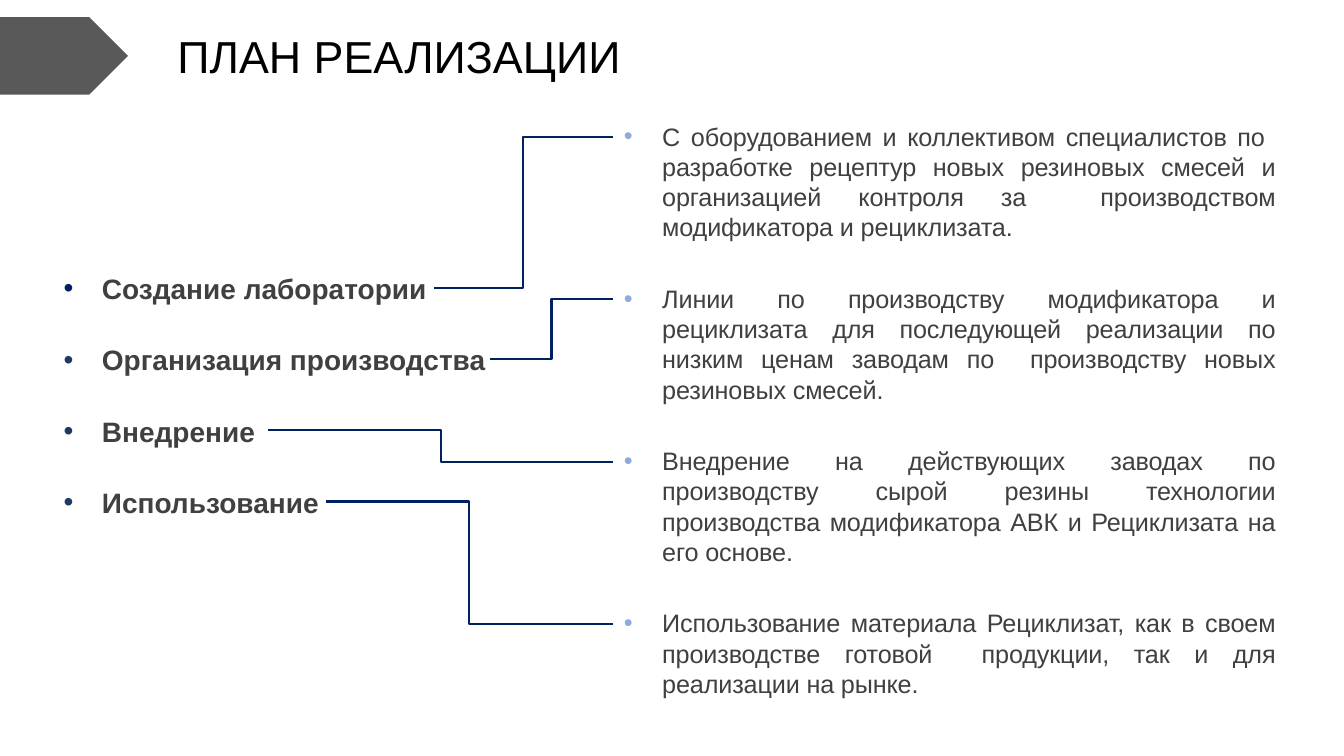
from lxml import etree
from pptx import Presentation
from pptx.dml.color import RGBColor
from pptx.enum.shapes import MSO_CONNECTOR, MSO_SHAPE
from pptx.enum.text import MSO_ANCHOR, MSO_AUTO_SIZE, PP_ALIGN
from pptx.oxml.ns import qn
from pptx.util import Inches, Pt

ELBOW = MSO_CONNECTOR.ELBOW
ARROW = MSO_SHAPE.PENTAGON
TOP = MSO_ANCHOR.TOP
FIXED = MSO_AUTO_SIZE.NONE
LEFT, BOTH = PP_ALIGN.LEFT, PP_ALIGN.JUSTIFY

BLACK = RGBColor(0x00, 0x00, 0x00)
DARK = RGBColor(0x40, 0x40, 0x40)
GREY = RGBColor(0x59, 0x59, 0x59)
NAVY = RGBColor(0x00, 0x20, 0x60)
BLUE = RGBColor(0x20, 0x38, 0x64)
SKY = RGBColor(0x8F, 0xAA, 0xDC)
FONT = "Arial"

TITLE = "ПЛАН РЕАЛИЗАЦИИ"
STEPS = [
    ("Создание лаборатории", NAVY, 4.3,
     "С оборудованием и коллективом специалистов по  разработке рецептур "
     "новых резиновых смесей и организацией контроля за  производством "
     "модификатора и рециклизата."),
    ("Организация производства", BLUE, 4.86,
     "Линии по производству модификатора и рециклизата для последующей "
     "реализации по низким ценам заводам по  производству новых "
     "резиновых смесей."),
    ("Внедрение", BLUE, 2.66,
     "Внедрение на действующих заводах по производству сырой резины "
     "технологии производства модификатора АВК и Рециклизата на его основе."),
    ("Использование", BLUE, 3.23,
     "Использование материала Рециклизат, как в своем производстве "
     "готовой  продукции, так и для реализации на рынке."),
]

WIDE, HIGH = 13.33, 7.5
STEP_Y, STEP_ROW = 2.86, 0.705
NOTE_X, NOTE_Y, NOTE_ROW = 6.08, 1.15, 1.61
NOTE_W, NOTE_H = 6.67, 1.31
LINE_Y = NOTE_Y + 0.21
STEP_GAP = 27


def place(shape, x, y, w, h):
    shape.left, shape.top = Inches(x), Inches(y)
    shape.width, shape.height = Inches(w), Inches(h)
    frame = shape.text_frame
    frame.word_wrap = True
    frame.auto_size = FIXED
    frame.vertical_anchor = TOP
    return frame


def write(para, text, size, color, bold=False, space=0):
    run = para.add_run()
    run.text = text
    font = run.font
    font.name, font.size, font.bold = FONT, Pt(size), bold
    font.color.rgb = color
    if space:
        run._r.get_or_add_rPr().set("spc", str(space))


def bullet(para, color, gap=0):
    props = para._p.get_or_add_pPr()
    props.set("marL", str(Inches(0.39)))
    props.set("indent", str(Inches(-0.38)))
    tint = etree.SubElement(props, qn("a:buClr"))
    etree.SubElement(tint, qn("a:srgbClr")).set("val", str(color))
    etree.SubElement(props, qn("a:buFont")).set("typeface", FONT)
    etree.SubElement(props, qn("a:buChar")).set("char", "•")
    para.alignment = BOTH
    para.space_before = Pt(gap)


def link(slide, x, y, end_x, end_y):
    line = slide.shapes.add_connector(
        ELBOW, Inches(x), Inches(y), Inches(end_x), Inches(end_y))
    line.line.color.rgb = NAVY
    line.line.width = Pt(1.5)
    etree.SubElement(line._element.spPr, qn("a:effectLst"))


def main():
    deck = Presentation()
    deck.slide_width, deck.slide_height = Inches(WIDE), Inches(HIGH)
    slide = deck.slides.add_slide(deck.slide_layouts[1])
    head, body = slide.placeholders

    flag = slide.shapes.add_shape(
        ARROW, 0, Inches(0.17), Inches(1.27), Inches(0.77))
    flag.shadow.inherit = False
    flag.fill.solid()
    flag.fill.fore_color.rgb = GREY
    flag.line.fill.background()

    para = place(head, 1.66, 0.23, 11.09, 0.64).paragraphs[0]
    para.alignment = LEFT
    write(para, TITLE, 32, BLACK)

    frame = place(body, 0.52, 2.64, 5.42, 2.54)
    for i, (name, color, x, note) in enumerate(STEPS):
        para = frame.add_paragraph() if i else frame.paragraphs[0]
        bullet(para, color, STEP_GAP if i else 0)
        write(para, name, 20, DARK, bold=True)

        shift = i * NOTE_ROW
        box = slide.shapes.add_textbox(0, 0, 0, 0)
        para = place(box, NOTE_X, NOTE_Y + shift, NOTE_W, NOTE_H).paragraphs[0]
        bullet(para, SKY)
        write(para, note, 18, DARK, space=-10)
        link(slide, x, STEP_Y + i * STEP_ROW, NOTE_X, LINE_Y + shift)

    deck.save("out.pptx")


if __name__ == "__main__":
    main()
